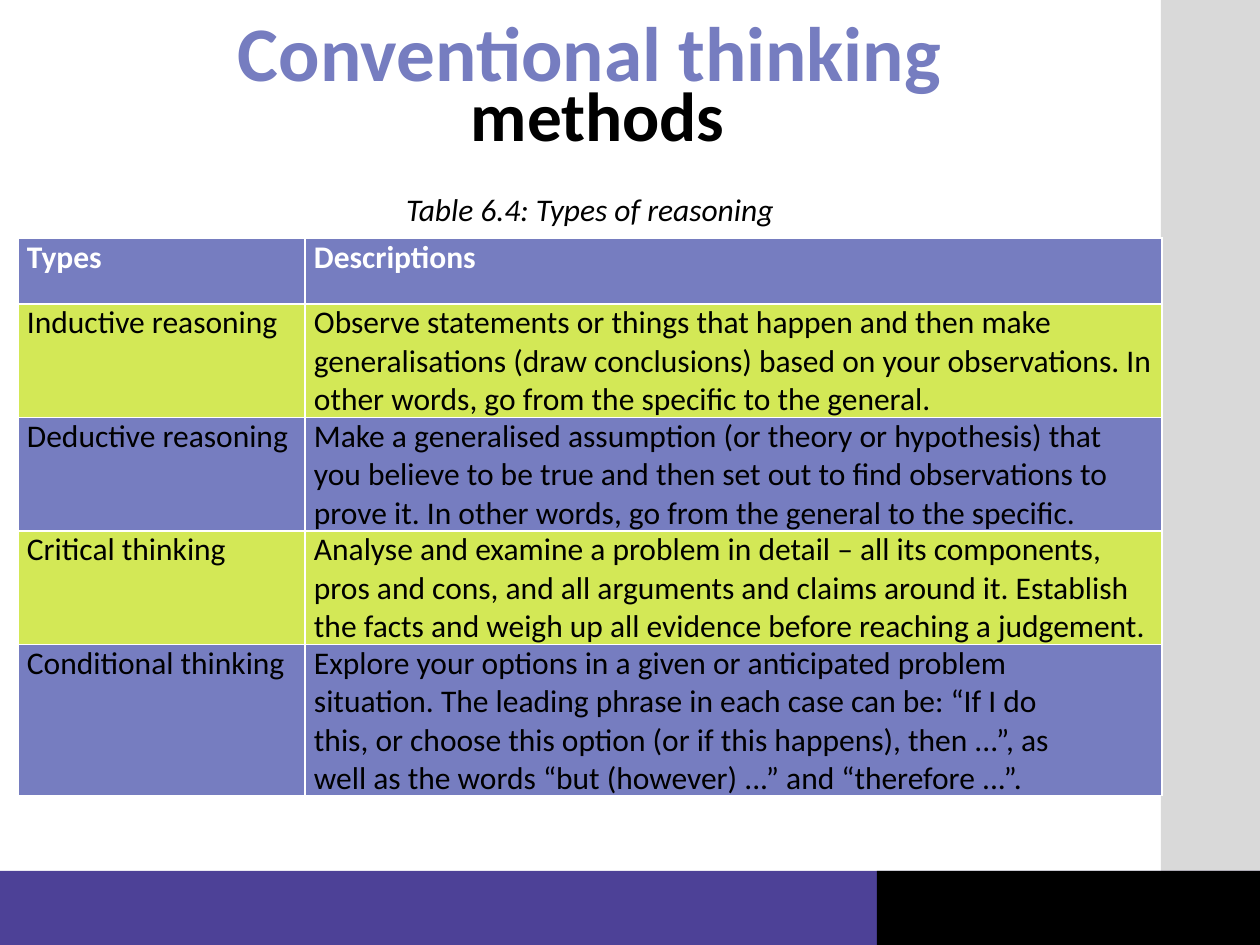
from lxml import etree
from pptx import Presentation
from pptx.dml.color import RGBColor
from pptx.enum.shapes import MSO_SHAPE
from pptx.enum.text import MSO_ANCHOR, MSO_AUTO_SIZE, PP_ALIGN
from pptx.oxml.ns import qn
from pptx.util import Emu, Pt

RECTANGLE = MSO_SHAPE.RECTANGLE
MIDDLE = MSO_ANCHOR.MIDDLE
NO_AUTOFIT = MSO_AUTO_SIZE.NONE
CENTER = PP_ALIGN.CENTER

WHITE = RGBColor(0xFF, 0xFF, 0xFF)
BLACK = RGBColor(0, 0, 0)
GRAY = RGBColor(0xD9, 0xD9, 0xD9)
PURPLE = RGBColor(0x4D, 0x41, 0x97)
LAVENDER = RGBColor(0x76, 0x7D, 0xC0)
LIME = RGBColor(0xD3, 0xE8, 0x56)

FONT = "Calibri"
PX = 914400 // 126

TITLE = [("Conventional thinking", 44.1, LAVENDER), (" methods", 39.6, BLACK)]
CAPTION = "Table\u00a06.4: Types of reasoning"
REASONING = [
    ("Types", ["Descriptions"]),
    ("Inductive reasoning", [
        "Observe statements or things that happen and then make generalisations "
        "(draw conclusions) based on your observations. In other words, go from "
        "the specific to the general."]),
    ("Deductive reasoning", [
        "Make a generalised assumption (or theory or hypothesis) that you believe "
        "to be true and then set out to find observations to prove it. In other "
        "words, go from the general to the specific."]),
    ("Critical thinking", [
        "Analyse and examine a problem in detail – all its components, pros and "
        "cons, and all arguments and claims around it. Establish the facts and "
        "weigh up all evidence before reaching a judgement."]),
    ("Conditional thinking", [
        "Explore your options in a given or anticipated problem",
        "situation. The leading phrase in each case can be: “If I do",
        "this, or choose this option (or if this happens), then ...”, as",
        "well as the words “but (however) ...” and “therefore ...”."]),
]
COLUMN_WIDTHS = [287, 857]
ROW_HEIGHTS = [66, 113, 113, 113, 151]
BANDS = [
    ((1161, 0, 99, 944), GRAY),
    ((0, 871, 1260, 74), PURPLE),
    ((877, 871, 383, 74), BLACK),
]


def px(*lengths):
    return [Emu(length * PX) for length in lengths]


def add_run(paragraph, text, size, color, bold=False, italic=False):
    run = paragraph.add_run()
    run.text = text
    font = run.font
    font.name, font.size, font.bold, font.italic = FONT, Pt(size), bold, italic
    font.color.rgb = color


def add_borders(cell):
    properties = cell._tc.get_or_add_tcPr()
    for position, side in enumerate(("lnL", "lnR", "lnT", "lnB")):
        line = etree.Element(qn(f"a:{side}"), w=str(Pt(1)))
        fill = etree.SubElement(line, qn("a:solidFill"))
        etree.SubElement(fill, qn("a:srgbClr"), val=str(WHITE))
        properties.insert(position, line)


def fill_cell(cell, lines, is_header, color):
    cell.margin_left, cell.margin_right = px(9, 9)
    cell.margin_top = cell.margin_bottom = 0
    cell.fill.solid()
    cell.fill.fore_color.rgb = color
    add_borders(cell)
    frame = cell.text_frame
    for index, line in enumerate(lines):
        paragraph = frame.add_paragraph() if index else frame.paragraphs[0]
        add_run(paragraph, line, 18, WHITE if is_header else BLACK, bold=is_header)


presentation = Presentation()
presentation.slide_width, presentation.slide_height = px(1260, 945)
slide = presentation.slides.add_slide(presentation.slide_layouts[5])

for box, color in BANDS:
    band = slide.shapes.add_shape(RECTANGLE, *px(*box))
    band.shadow.inherit = False
    band.fill.solid()
    band.fill.fore_color.rgb = color
    band.line.fill.background()

title = slide.shapes.title
title.left, title.top, title.width, title.height = px(33, 19, 1114, 145)
title.text_frame.auto_size = NO_AUTOFIT
title.text_frame.vertical_anchor = MIDDLE
heading = title.text_frame.paragraphs[0]
heading.alignment, heading.line_spacing = CENTER, 0.7
for index, (text, size, color) in enumerate(TITLE):
    if index:
        heading.add_line_break()
    add_run(heading, text, size, color, bold=True)

caption = slide.shapes.add_textbox(*px(18, 178, 1144, 57)).text_frame
caption.word_wrap = True
caption_line = caption.paragraphs[0]
caption_line.alignment, caption_line.line_spacing = CENTER, 1.15
add_run(caption_line, CAPTION, 18, BLACK, italic=True)

table = slide.shapes.add_table(
    len(REASONING), len(COLUMN_WIDTHS),
    *px(18, 238, sum(COLUMN_WIDTHS), sum(ROW_HEIGHTS))).table
for column, width in zip(table.columns, px(*COLUMN_WIDTHS)):
    column.width = width
for row, height in zip(table.rows, px(*ROW_HEIGHTS)):
    row.height = height
for index, (kind, description) in enumerate(REASONING):
    color = LIME if index % 2 else LAVENDER
    for column, lines in enumerate(([kind], description)):
        fill_cell(table.cell(index, column), lines, index == 0, color)

presentation.save("out.pptx")
